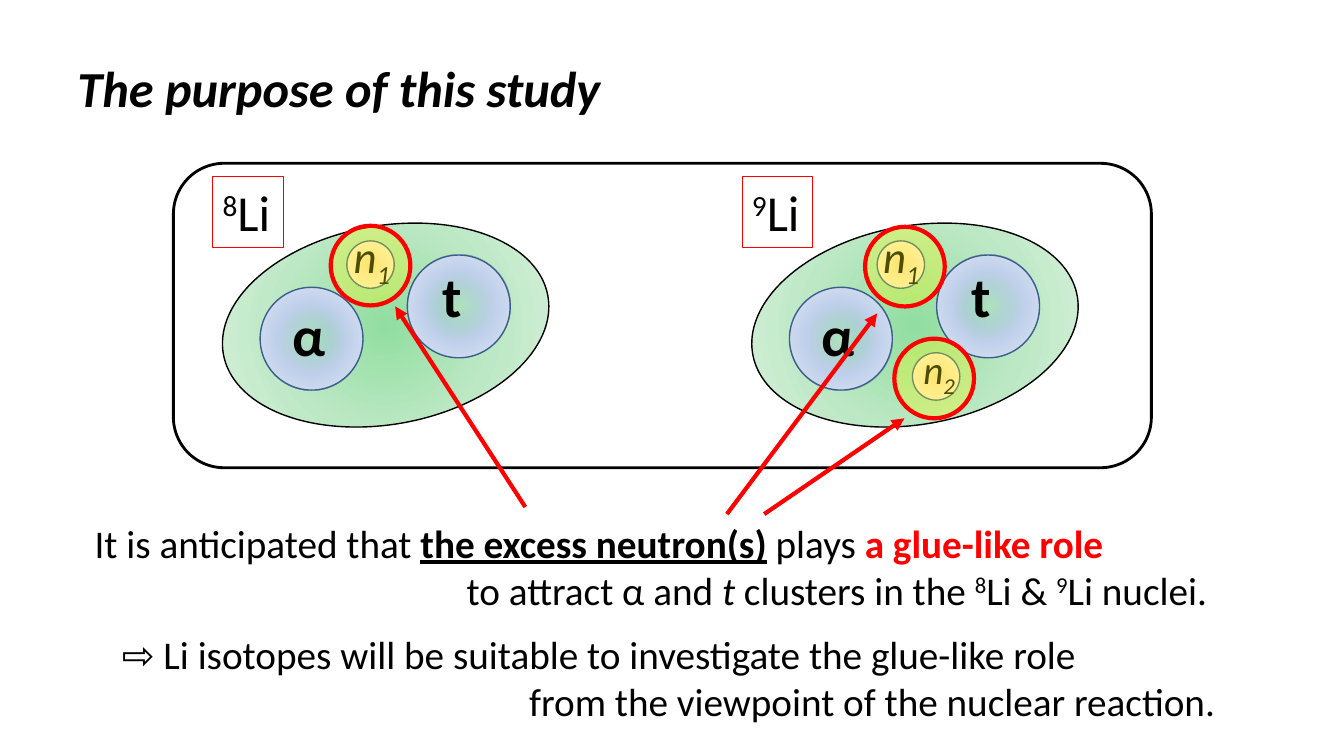
from dataclasses import dataclass, field

from pptx import Presentation
from pptx.dml.color import RGBColor
from pptx.enum.shapes import MSO_CONNECTOR as Connector, MSO_SHAPE as Preset
from pptx.enum.text import MSO_ANCHOR as Anchor, MSO_AUTO_SIZE as AutoSize, PP_ALIGN as Align
from pptx.oxml import parse_xml
from pptx.oxml.ns import nsdecls, qn
from pptx.util import Inches, Pt

BLACK = RGBColor(0x00, 0x00, 0x00)
WHITE = RGBColor(0xFF, 0xFF, 0xFF)
RED = RGBColor(0xFF, 0x00, 0x00)
YELLOW = RGBColor(0xFF, 0xFF, 0x00)
STEEL = RGBColor(0x3A, 0x5F, 0x8C)

# Gradient colours from the centre outwards
GREENS = (RGBColor(0x91, 0xDE, 0xA0), RGBColor(0xBD, 0xE8, 0xC5), RGBColor(0xDF, 0xF3, 0xE3))
BLUES = (RGBColor(0x9A, 0xB5, 0xE4), RGBColor(0xC2, 0xD1, 0xED), RGBColor(0xE1, 0xE8, 0xF5))
ORANGES = (RGBColor(0xFF, 0xD8, 0xA0), RGBColor(0xFF, 0xE6, 0xC5), RGBColor(0xFF, 0xF2, 0xE3))

SUPERSCRIPT, SUBSCRIPT = 30, -25
CLUSTER, NEUTRON, RING = 1.02, 0.47, 0.79


@dataclass
class Span:
    text: str
    style: dict = field(default_factory=dict)
    color: RGBColor = BLACK
    baseline: int = 0


@dataclass
class Line:
    spans: list[Span]
    indent: float = 0


@dataclass
class Neutron:
    number: str
    size: int
    ball: tuple[float, float]
    label: tuple[float, float, float, float]
    ring: tuple[float, float]


@dataclass
class Nucleus:
    mass: str
    left: float
    neutrons: list[Neutron]


@dataclass
class Arrow:
    start: tuple[float, float]
    end: tuple[float, float]


def write(frame, lines: list[Line], size: int, wrap: bool = False) -> None:
    settings = {
        "auto_size": AutoSize.SHAPE_TO_FIT_TEXT,
        "word_wrap": wrap,
        "vertical_anchor": Anchor.TOP,
    }
    for name, value in settings.items():
        setattr(frame, name, value)
    for index, line in enumerate(lines):
        para = frame.paragraphs[0] if index == 0 else frame.add_paragraph()
        para.alignment = Align.LEFT
        if line.indent:
            para._p.get_or_add_pPr().set("marL", str(Inches(line.indent)))
        for item in line.spans:
            span = para.add_run()
            span.text = item.text
            for name, value in {"name": "Calibri", "size": Pt(size), **item.style}.items():
                setattr(span.font, name, value)
            span.font.color.rgb = item.color
            if item.baseline:
                span._r.get_or_add_rPr().set("baseline", str(item.baseline * 1000))


def add_text(page, at: tuple, lines: list[Line], size: int, wrap: bool = False) -> None:
    box = page.shapes.add_textbox(*map(Inches, at))
    write(box.text_frame, lines, size, wrap)


def add_outline(page, preset, at: tuple, color: RGBColor, width: float):
    shape = page.shapes.add_shape(preset, *map(Inches, at))
    shape.shadow.inherit = False
    shape.fill.background()
    shape.line.color.rgb = color
    shape.line.width = Pt(width)
    return shape


def fill_radial(shape, colors: tuple, clear_centre: bool = False) -> None:
    stops = ""
    for index, color in enumerate(colors):
        alpha = '<a:alpha val="0"/>' if clear_centre and index == 0 else ""
        stops += f'<a:gs pos="{index * 50000}"><a:srgbClr val="{color}">{alpha}</a:srgbClr></a:gs>'
    gradient = parse_xml(
        f'<a:gradFill {nsdecls("a")} rotWithShape="1"><a:gsLst>{stops}</a:gsLst><a:path path="circle">'
        '<a:fillToRect l="50000" t="50000" r="50000" b="50000"/></a:path></a:gradFill>'
    )
    properties = shape._element.spPr
    properties.replace(properties.find(qn("a:noFill")), gradient)


def add_ball(page, left: float, top: float, size: float, colors: tuple, clear: bool = False) -> None:
    ball = add_outline(page, Preset.OVAL, (left, top, size, size), STEEL, 1)
    fill_radial(ball, colors, clear)


def add_nucleus(page, nucleus: Nucleus) -> None:
    left = nucleus.left
    body = add_outline(page, Preset.OVAL, (left, 2.24, 3.27, 1.97), BLACK, 1)
    body.rotation = 349.8
    fill_radial(body, GREENS)

    bold = {"bold": True}
    add_ball(page, left + 0.39, 2.85, CLUSTER, BLUES, True)
    add_text(page, (left + 0.61, 2.93, 0.53, 0.77), [Line([Span("α", bold)])], 40)
    for neutron in nucleus.neutrons:
        add_ball(page, *neutron.ball, NEUTRON, ORANGES)
        name = [Span("n", {"italic": True}), Span(neutron.number, {"italic": True}, baseline=SUBSCRIPT)]
        add_text(page, neutron.label, [Line(name)], neutron.size)

    tag = add_outline(page, Preset.RECTANGLE, (left - 0.08, 1.75, 0.7, 0.71), RED, 0.75)
    tag.fill.solid()
    tag.fill.fore_color.rgb = WHITE
    write(tag.text_frame, [Line([Span(nucleus.mass, baseline=SUPERSCRIPT), Span("Li")])], 36)

    add_ball(page, left + 1.85, 2.53, CLUSTER, BLUES, True)
    add_text(page, (left + 2.1, 2.55, 0.4, 0.77), [Line([Span("t", bold)])], 40)

    # Translucent rings round the excess neutrons
    for neutron in nucleus.neutrons:
        ring = add_outline(page, Preset.OVAL, (*neutron.ring, RING, RING), RED, 3)
        ring.fill.solid()
        ring.fill.fore_color.rgb = YELLOW
        color = ring._element.spPr.find(qn("a:solidFill"))[0]
        color.append(parse_xml(f'<a:alpha {nsdecls("a")} val="30000"/>'))


def add_arrow(page, arrow: Arrow) -> None:
    line = page.shapes.add_connector(Connector.STRAIGHT, *map(Inches, arrow.start + arrow.end))
    line.line.color.rgb = RED
    line.line.width = Pt(3)
    line.line._get_or_add_ln().append(parse_xml(f'<a:tailEnd {nsdecls("a")} type="triangle"/>'))
    line._element.spPr.append(parse_xml(f'<a:effectLst {nsdecls("a")}/>'))


NUCLEI = [
    Nucleus("8", 2.19, [Neutron("1", 32, (3.44, 2.39), (3.41, 2.22, 0.59, 0.64), (3.28, 2.24))]),
    Nucleus("9", 7.44, [
        Neutron("1", 32, (8.7, 2.39), (8.66, 2.22, 0.59, 0.64), (8.58, 2.25)),
        Neutron("2", 28, (9.05, 3.5), (9.06, 3.38, 0.54, 0.57), (8.87, 3.36)),
    ]),
]
ARROWS = [
    Arrow((5.21, 5.03), (3.92, 3.04)),
    Arrow((7.21, 5.1), (8.7, 3.11)),
    Arrow((7.58, 5.1), (8.97, 4.15)),
]
TITLE = [Line([Span("The purpose of this study", {"bold": True, "italic": True})])]
EXPECTATION = [
    Line([
        Span("It is anticipated that "),
        Span("the excess neutron(s)", {"bold": True, "underline": True}),
        Span(" plays "),
        Span("a glue-like role", {"bold": True}, RED),
    ]),
    Line([
        Span("to attract α and "), Span("t", {"italic": True}), Span(" clusters in the "),
        Span("8", baseline=SUPERSCRIPT), Span("Li & "),
        Span("9", baseline=SUPERSCRIPT), Span("Li nuclei."),
    ], indent=3.69),
]
CONCLUSION = [
    Line([Span("⇨ Li isotopes will be suitable to investigate the glue-like role")]),
    Line([Span("from the viewpoint of the nuclear reaction.")], indent=4.04),
]


def main() -> None:
    deck = Presentation()
    deck.slide_width, deck.slide_height = Inches(13.33), Inches(7.5)
    page = deck.slides.add_slide(deck.slide_layouts[6])

    # Statement and frame
    add_text(page, (0.84, 5.1, 11.34, 1.04), EXPECTATION, 28, wrap=True)
    add_outline(page, Preset.ROUNDED_RECTANGLE, (1.72, 1.62, 9.7, 3.02), BLACK, 2)

    # Nuclei and the arrows to their neutrons
    for nucleus in NUCLEI:
        add_nucleus(page, nucleus)
    for arrow in ARROWS:
        add_arrow(page, arrow)

    # Title and conclusion
    add_text(page, (0.67, 0.52, 5.56, 0.71), TITLE, 36)
    add_text(page, (1.11, 6.2, 11.19, 1.04), CONCLUSION, 28, wrap=True)
    deck.save("out.pptx")


if __name__ == "__main__":
    main()
